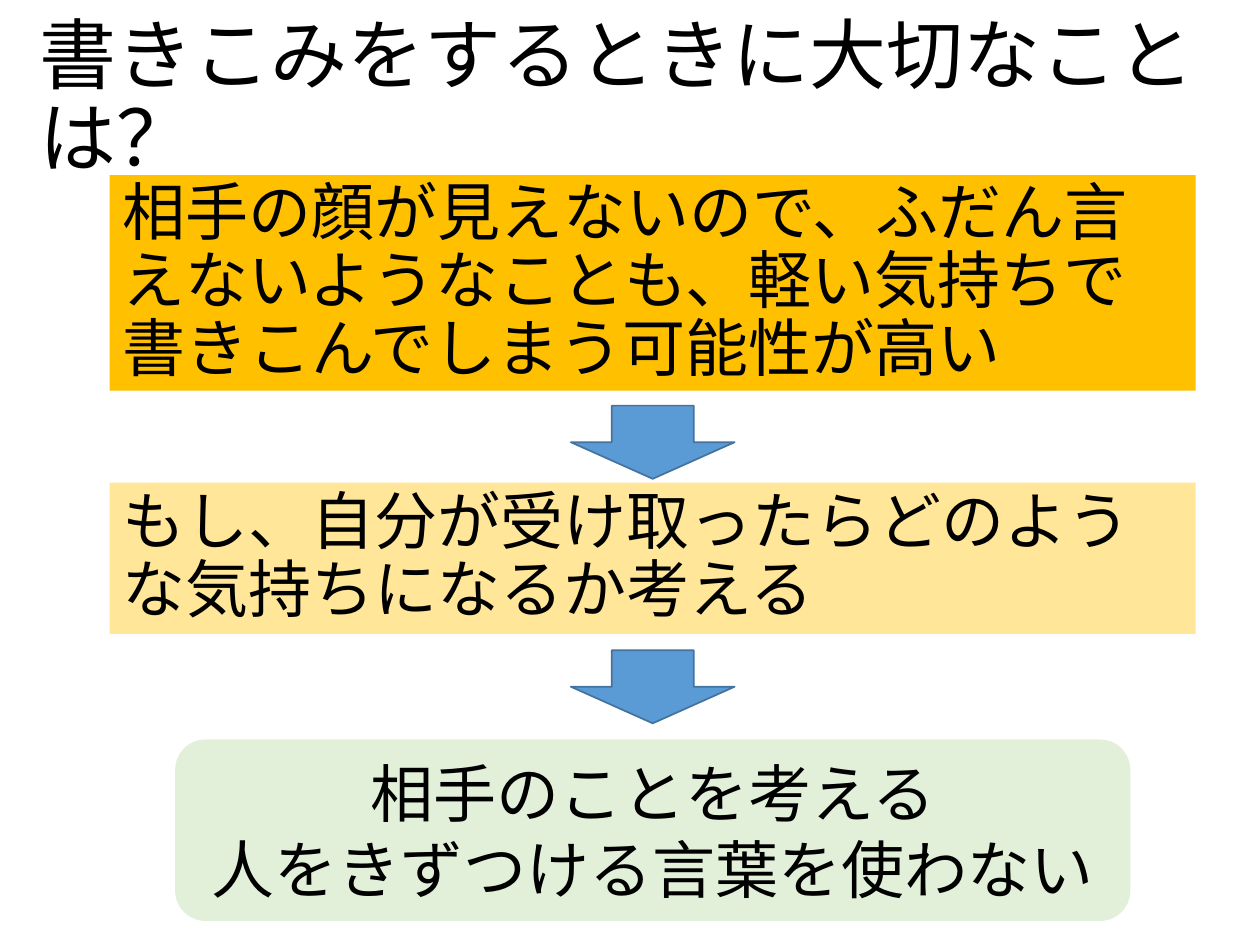
from pptx import Presentation
from pptx.dml.color import RGBColor
from pptx.enum.shapes import MSO_SHAPE as Shape
from pptx.enum.text import MSO_ANCHOR as Anchor, PP_ALIGN as Align
from pptx.util import Pt

AXIS = 373


def color(hex_value):
    """Turn a hex string into a colour."""
    return RGBColor.from_string(hex_value)


def write(frame, lines, size, anchor, align=Align.LEFT, spacing=0.9, before=0):
    """Fill a text frame with one paragraph per line."""
    frame.word_wrap = True
    frame.vertical_anchor = anchor
    frame.text = "\n".join(lines)
    for paragraph in frame.paragraphs:
        paragraph.alignment = align
        paragraph.line_spacing = spacing
        paragraph.space_before = Pt(before)
        for run in paragraph.runs:
            run.font.size = Pt(size)
            run.font.name = "Calibri"
            run.font.color.rgb = color("000000")


def add_title(slide, title):
    """Add the question at the top."""
    question = slide.shapes.add_textbox(Pt(15.8), Pt(26.6), Pt(691.2), Pt(61.2))
    write(question.text_frame, [title], 44, Anchor.MIDDLE)


def add_centered(slide, kind, top, width, height, fill, line=None):
    """Add a filled shape centred on the flow axis."""
    step = slide.shapes.add_shape(
        kind, Pt(AXIS - width / 2), Pt(top), Pt(width), Pt(height))
    step.shadow.inherit = False
    step.fill.solid()
    step.fill.fore_color.rgb = color(fill)
    if line:
        step.line.color.rgb = color(line)
        step.line.width = Pt(1)
    else:
        step.line.fill.background()
    return step


def add_reason(slide, top, height, fill, text, anchor):
    """Add a wide box with one left-aligned statement."""
    reason = add_centered(slide, Shape.RECTANGLE, top, 620.6, height, fill)
    write(reason.text_frame, [text], 36, anchor, before=7.5)


def add_conclusion(slide, lines):
    """Add the rounded box that ends the flow."""
    conclusion = add_centered(
        slide, Shape.ROUNDED_RECTANGLE, 422.6, 545.8, 103.7, "E2F0D9")
    write(conclusion.text_frame, lines, 36, Anchor.MIDDLE, Align.CENTER, 1.0)


def main():
    """Build the slide and save it."""
    deck = Presentation()
    deck.slide_width, deck.slide_height = Pt(720), Pt(540)
    slide = deck.slides.add_slide(deck.slide_layouts[6])
    add_title(slide, "書きこみをするときに大切なことは？")
    add_reason(slide, 100.1, 123.1, "FFC000",
               "相手の顔が見えないので、ふだん言えないようなことも、"
               "軽い気持ちで書きこんでしまう可能性が高い", Anchor.TOP)
    add_reason(slide, 275.8, 86.4, "FFE699",
               "もし、自分が受け取ったらどのような気持ちになるか考える", Anchor.MIDDLE)
    add_conclusion(slide, ["相手のことを考える", "人をきずつける言葉を使わない"])
    for arrow_top in (231.8, 371.5):
        add_centered(slide, Shape.DOWN_ARROW, arrow_top, 93.6, 41.8, "5B9BD5", "43739E")
    deck.save("out.pptx")


if __name__ == "__main__":
    main()
